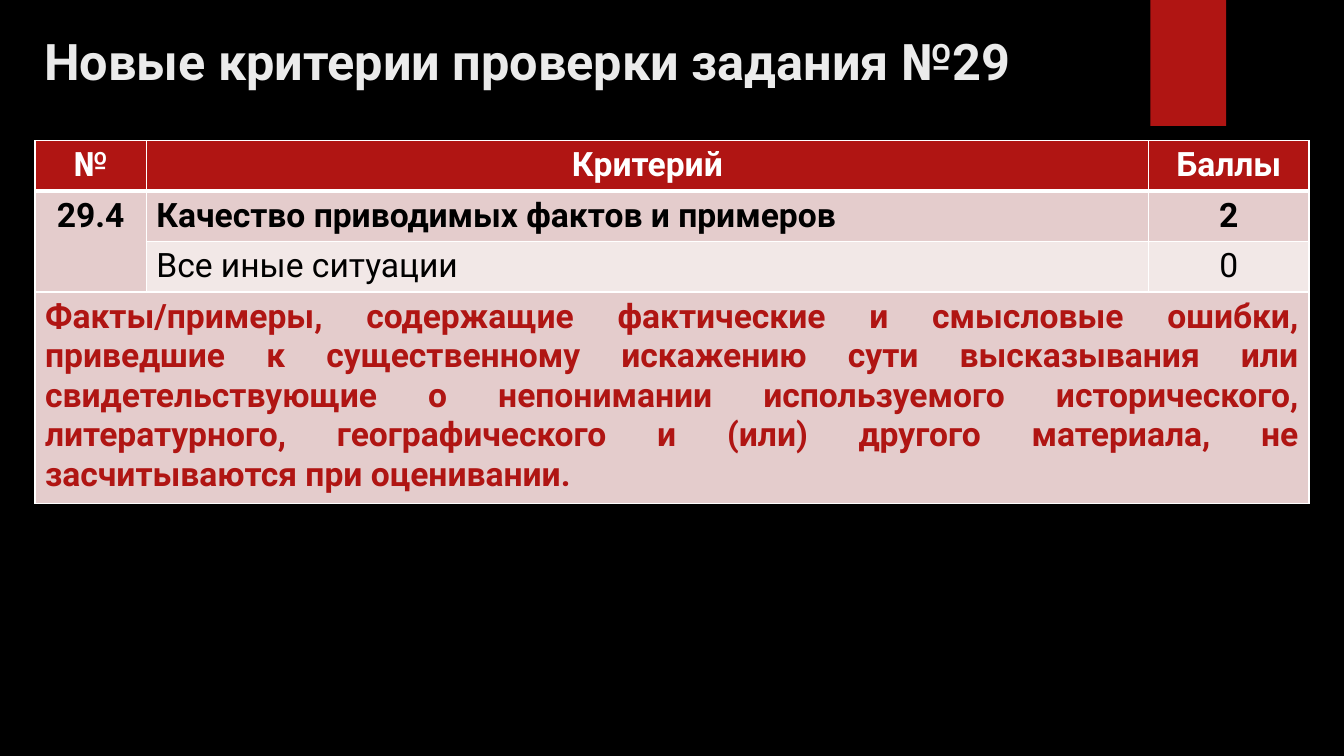
import pptx
import pptx.util
import pptx.dml.color
import pptx.enum.shapes
import pptx.enum.text
import pptx.oxml
import pptx.oxml.ns
import lxml.etree

Pt = pptx.util.Pt
ALIGN = pptx.enum.text.PP_ALIGN
FONT = "Roboto"
COLORS = {
    "background": "000000",
    "accent": "B01513",
    "title": "EBEBEB",
    "white": "FFFFFF",
    "black": "000000",
    "band": "E4CCCC",
    "light_band": "F2E8E7",
}
HEADINGS = ["№", "Критерий", "Баллы"]
CRITERION = ["29.4", "Качество приводимых фактов и примеров", "2"]
OTHERWISE = ["", "Все иные ситуации", "0"]
REMARK = [
    "Факты/примеры, содержащие фактические и смысловые ошибки, приведшие к "
    "существенному искажению сути высказывания или свидетельствующие о непонимании "
    "используемого исторического, литературного, географического и (или) другого "
    "материала, не засчитываются при оценивании.", "", "",
]
ROWS = [
    (HEADINGS, "accent", "white", True, ALIGN.CENTER),
    (CRITERION, "band", "black", True, ALIGN.JUSTIFY),
    (OTHERWISE, "light_band", "black", False, ALIGN.JUSTIFY),
    (REMARK, "band", "accent", True, ALIGN.JUSTIFY),
]
COLUMN_WIDTHS = [79.5, 716, 114.5]
ROW_HEIGHTS = [35.5, 35.5, 35.5, 148.5]


def rgb(name):
    return pptx.dml.color.RGBColor.from_string(COLORS[name])


def write(frame, text, size, color, bold, align):
    frame.text = text
    paragraph = frame.paragraphs[0]
    paragraph.alignment = align
    for run in paragraph.runs:
        run.font.name = FONT
        run.font.size = Pt(size)
        run.font.bold = bold
        run.font.color.rgb = rgb(color)


def add_borders(cell, bottom_width):
    properties = cell._tc.get_or_add_tcPr()
    for side, width in (("L", 1), ("R", 1), ("T", 1), ("B", bottom_width)):
        border = lxml.etree.SubElement(
            properties, pptx.oxml.ns.qn(f"a:ln{side}"), w=str(Pt(width)))
        fill = lxml.etree.SubElement(border, pptx.oxml.ns.qn("a:solidFill"))
        lxml.etree.SubElement(
            fill, pptx.oxml.ns.qn("a:srgbClr"), val=COLORS["white"])


def add_ribbon(slide, left, top, width, height):
    ribbon = slide.shapes.add_shape(
        pptx.enum.shapes.MSO_SHAPE.RECTANGLE, Pt(left), Pt(top), Pt(width), Pt(height))
    ribbon.shadow.inherit = False
    ribbon.fill.solid()
    ribbon.fill.fore_color.rgb = rgb("accent")
    ribbon.line.fill.background()


def add_title(slide, left, top, width, height):
    title = slide.shapes.add_textbox(Pt(left), Pt(top), Pt(width), Pt(height))
    frame = title.text_frame
    frame.word_wrap = True
    frame.vertical_anchor = pptx.enum.text.MSO_ANCHOR.MIDDLE
    write(frame, "Новые критерии проверки задания №29", 36, "title", True, ALIGN.LEFT)


def add_criteria(slide, left, top):
    criteria = slide.shapes.add_table(
        len(ROWS), len(COLUMN_WIDTHS), Pt(left), Pt(top),
        Pt(sum(COLUMN_WIDTHS)), Pt(sum(ROW_HEIGHTS))).table
    for column, width in zip(criteria.columns, COLUMN_WIDTHS):
        column.width = Pt(width)
    for row, height in zip(criteria.rows, ROW_HEIGHTS):
        row.height = Pt(height)
    for r, (texts, fill, color, bold, align) in enumerate(ROWS):
        for c, text in enumerate(texts):
            cell = criteria.cell(r, c)
            centred = c != 1 and texts is not REMARK
            add_borders(cell, 3 if r == 0 else 1)
            cell.fill.solid()
            cell.fill.fore_color.rgb = rgb(fill)
            write(cell.text_frame, text, 24, color, bold,
                  ALIGN.CENTER if centred else align)
    criteria.cell(1, 0).merge(criteria.cell(2, 0))
    criteria.cell(3, 0).merge(criteria.cell(3, 2))


def main():
    deck = pptx.Presentation()
    deck.slide_width, deck.slide_height = Pt(960), Pt(540)
    slide = deck.slides.add_slide(deck.slide_layouts[6])
    slide.background.fill.solid()
    slide.background.fill.fore_color.rgb = rgb("background")
    add_ribbon(slide, 821.75, 0, 54, 90)
    add_title(slide, 24.5, 16, 795.5, 54)
    add_criteria(slide, 25, 100.5)
    deck.save("out.pptx")


if __name__ == "__main__":
    main()
